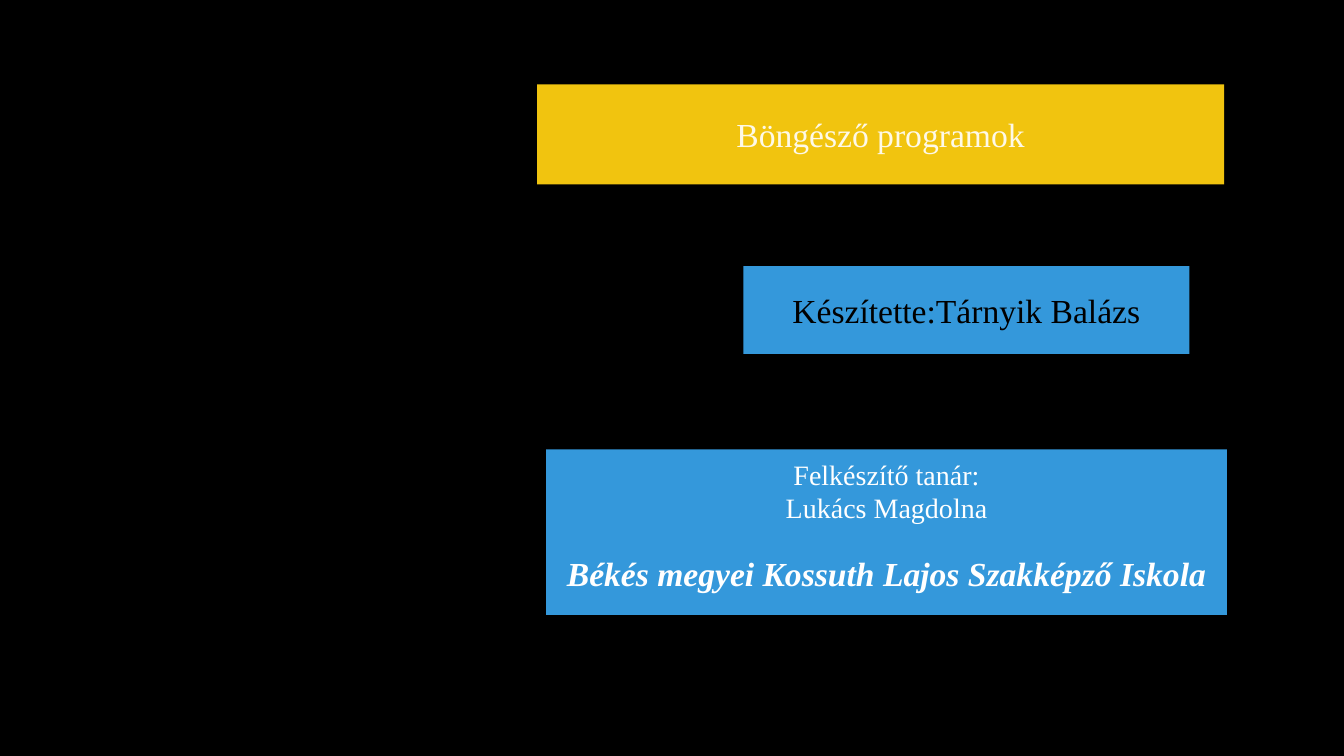
from pptx import Presentation
from pptx.dml.color import RGBColor
from pptx.enum.shapes import MSO_SHAPE
from pptx.enum.text import MSO_ANCHOR, PP_ALIGN
from pptx.util import Pt

COLORS = {
    "black": "000000",
    "white": "FFFFFF",
    "cream": "FEF9E7",
    "yellow": "F1C40F",
    "blue": "3498DB",
}

presentation = Presentation()
presentation.slide_width = Pt(960)
presentation.slide_height = Pt(540)
slide = presentation.slides.add_slide(presentation.slide_layouts[6])
slide.background.fill.solid()
slide.background.fill.fore_color.rgb = RGBColor.from_string(COLORS["black"])

school_left, school_width, school_height = 390.2, 486.2, 59.1
teacher_top = 321

panels = [
    ("Böngésző programok", 383.6, 60.2, 490.8, 71.6, "yellow", "cream", 24, False),
    ("Készítette:Tárnyik Balázs", 531, 190, 318.6, 62.8, "blue", "black", 24, False),
    ("Felkészítő tanár:\vLukács Magdolna", school_left, teacher_top,
     school_width, school_height, "blue", "white", 20, False),
    ("Békés megyei Kossuth Lajos Szakképző Iskola", school_left, teacher_top + school_height,
     school_width, school_height, "blue", "white", 24, True),
]

for wording, left, top, width, height, fill, ink, size, emphasis in panels:
    panel = slide.shapes.add_shape(
        MSO_SHAPE.RECTANGLE, Pt(left), Pt(top), Pt(width), Pt(height))
    panel.shadow.inherit = False
    panel.fill.solid()
    panel.fill.fore_color.rgb = RGBColor.from_string(COLORS[fill])
    panel.line.fill.background()
    frame = panel.text_frame
    frame.word_wrap = True
    frame.vertical_anchor = MSO_ANCHOR.MIDDLE
    frame.text = wording
    paragraph = frame.paragraphs[0]
    paragraph.alignment = PP_ALIGN.CENTER
    for run in paragraph.runs:
        run.font.name = "Times New Roman"
        run.font.size = Pt(size)
        run.font.bold = emphasis
        run.font.italic = emphasis
        run.font.color.rgb = RGBColor.from_string(COLORS[ink])

presentation.save("out.pptx")
